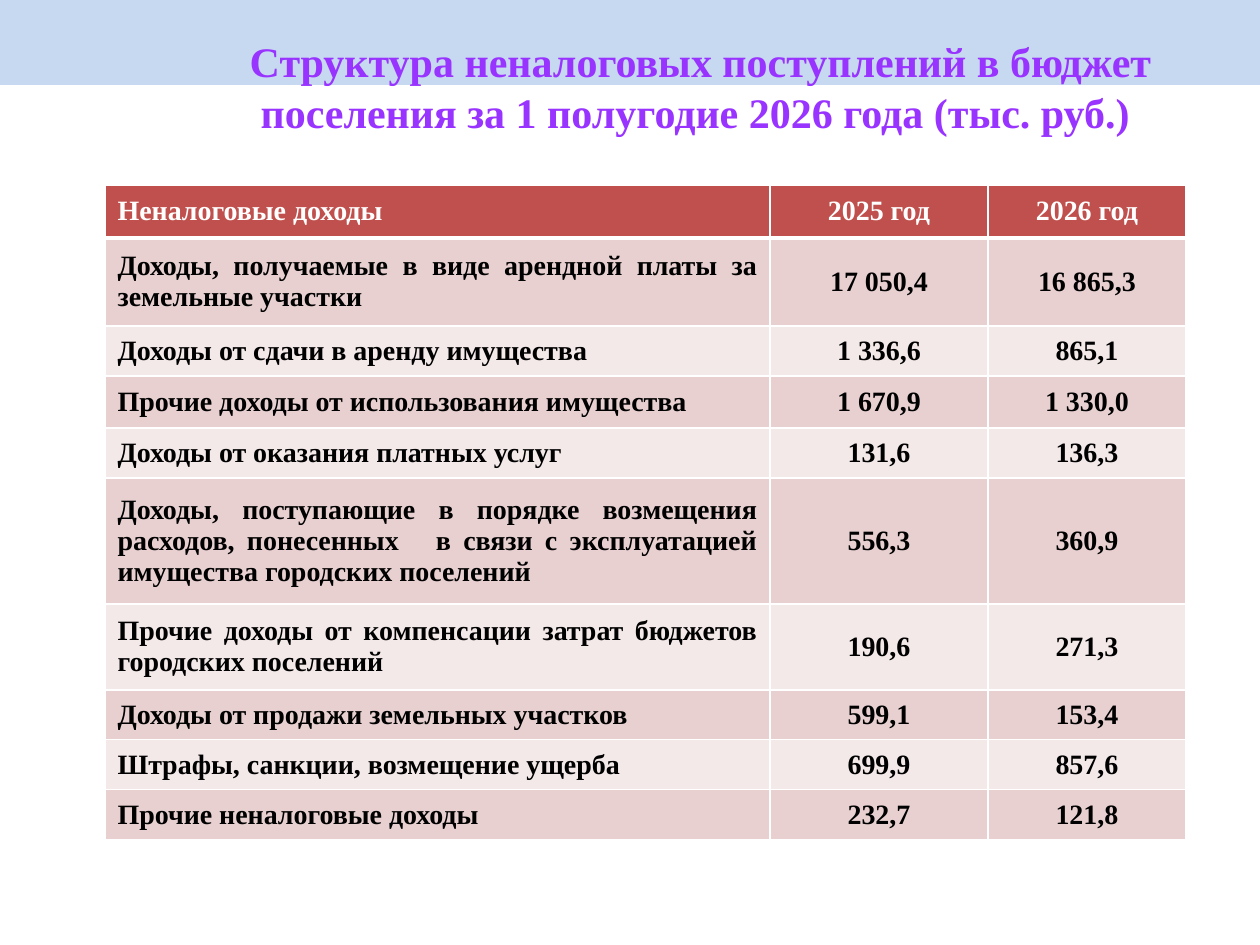
from dataclasses import dataclass

from lxml import etree
from pptx import Presentation
from pptx.dml.color import RGBColor
from pptx.enum.shapes import MSO_SHAPE
from pptx.enum.text import MSO_ANCHOR, PP_ALIGN
from pptx.oxml.ns import qn
from pptx.util import Emu, Pt

RECTANGLE = MSO_SHAPE.RECTANGLE
TOP, MIDDLE = MSO_ANCHOR.TOP, MSO_ANCHOR.MIDDLE
LEFT, CENTER, JUSTIFY = PP_ALIGN.LEFT, PP_ALIGN.CENTER, PP_ALIGN.JUSTIFY

PX_PER_INCH = 126
SLIDE_WIDTH, SLIDE_HEIGHT = 1260, 945
COLUMN_WIDTHS = (665, 218, 198)
HEADER_HEIGHT = 53


@dataclass(frozen=True)
class Theme:
    font: str = "Times New Roman"
    title_size: int = 24
    table_size: int = 16
    title: str = "9933FF"
    banner: str = "C6D9F1"
    header: str = "C0504D"
    header_text: str = "FFFFFF"
    body_text: str = "000000"
    bands: tuple[str, str] = ("E8D0D0", "F4E9E9")
    border: str = "FFFFFF"
    border_width: int = 1
    header_rule_width: int = 3


@dataclass(frozen=True)
class Income:
    source: str
    year_2025: str
    year_2026: str
    height: int = 50


THEME = Theme()
TITLE = "Структура неналоговых поступлений в бюджет поселения за 1 полугодие 2026 года (тыс. руб.) "
HEADINGS = ("Неналоговые доходы", "2025 год", "2026 год")
INCOMES = (
    Income("Доходы, получаемые в виде арендной платы за земельные участки",
           "17 050,4", "16 865,3", 88),
    Income("Доходы от сдачи в аренду имущества", "1 336,6", "865,1"),
    Income("Прочие доходы от использования имущества", "1 670,9", "1 330,0", 52),
    Income("Доходы от оказания платных услуг", "131,6", "136,3"),
    Income("Доходы, поступающие в порядке возмещения расходов, понесенных   в связи "
           "с эксплуатацией имущества городских поселений", "556,3", "360,9", 126),
    Income("Прочие доходы от компенсации затрат бюджетов городских поселений",
           "190,6", "271,3", 86),
    Income("Доходы от продажи земельных участков", "599,1", "153,4"),
    Income("Штрафы, санкции, возмещение ущерба", "699,9", "857,6"),
    Income("Прочие неналоговые доходы", "232,7", "121,8"),
)


def px(length: int) -> Emu:
    return Emu(round(length * 914400 / PX_PER_INCH))


def write(frame, text: str, size: int, color: str, align: PP_ALIGN) -> None:
    frame.text = text
    paragraph = frame.paragraphs[0]
    paragraph.alignment = align
    font = paragraph.runs[0].font
    font.name, font.size, font.bold = THEME.font, Pt(size), True
    font.color.rgb = RGBColor.from_string(color)


def add_banner(slide) -> None:
    banner = slide.shapes.add_shape(RECTANGLE, 0, 0, px(SLIDE_WIDTH), px(85))
    banner.shadow.inherit = False
    banner.fill.solid()
    banner.fill.fore_color.rgb = RGBColor.from_string(THEME.banner)
    banner.line.fill.background()


def add_title(slide) -> None:
    frame = slide.shapes.add_textbox(px(141), px(36), px(1119), px(100)).text_frame
    frame.word_wrap = True
    frame.vertical_anchor = TOP
    frame.margin_top = frame.margin_bottom = 0
    write(frame, TITLE, THEME.title_size, THEME.title, CENTER)


def set_borders(cell, top: int, bottom: int) -> None:
    """Draw the four cell edges; widths are in points."""
    properties = cell._tc.get_or_add_tcPr()
    side = THEME.border_width
    for tag, width in (("a:lnL", side), ("a:lnR", side), ("a:lnT", top), ("a:lnB", bottom)):
        edge = etree.SubElement(properties, qn(tag), w=str(Pt(width)))
        fill = etree.SubElement(edge, qn("a:solidFill"))
        etree.SubElement(fill, qn("a:srgbClr"), val=THEME.border)


def fill_row(table, index: int, texts: tuple[str, ...], height: int) -> None:
    is_header = index == 0
    table.rows[index].height = px(height)
    background = THEME.header if is_header else THEME.bands[(index - 1) % 2]
    color = THEME.header_text if is_header else THEME.body_text
    label_align = LEFT if is_header else JUSTIFY
    top = THEME.header_rule_width if index == 1 else THEME.border_width
    bottom = THEME.header_rule_width if is_header else THEME.border_width
    for column, text in enumerate(texts):
        cell = table.cell(index, column)
        cell.vertical_anchor = MIDDLE
        set_borders(cell, top, bottom)
        cell.fill.solid()
        cell.fill.fore_color.rgb = RGBColor.from_string(background)
        write(cell.text_frame, text, THEME.table_size, color,
              label_align if column == 0 else CENTER)


def add_income_table(slide) -> None:
    height = HEADER_HEIGHT + sum(income.height for income in INCOMES)
    table = slide.shapes.add_table(
        len(INCOMES) + 1, len(HEADINGS),
        px(105), px(185), px(sum(COLUMN_WIDTHS)), px(height)).table
    for column, width in zip(table.columns, COLUMN_WIDTHS):
        column.width = px(width)
    fill_row(table, 0, HEADINGS, HEADER_HEIGHT)
    for index, income in enumerate(INCOMES, start=1):
        fill_row(table, index, (income.source, income.year_2025, income.year_2026),
                 income.height)


def main() -> None:
    presentation = Presentation()
    presentation.slide_width = px(SLIDE_WIDTH)
    presentation.slide_height = px(SLIDE_HEIGHT)
    slide = presentation.slides.add_slide(presentation.slide_layouts[6])
    add_banner(slide)
    add_title(slide)
    add_income_table(slide)
    presentation.save("out.pptx")


if __name__ == "__main__":
    main()
